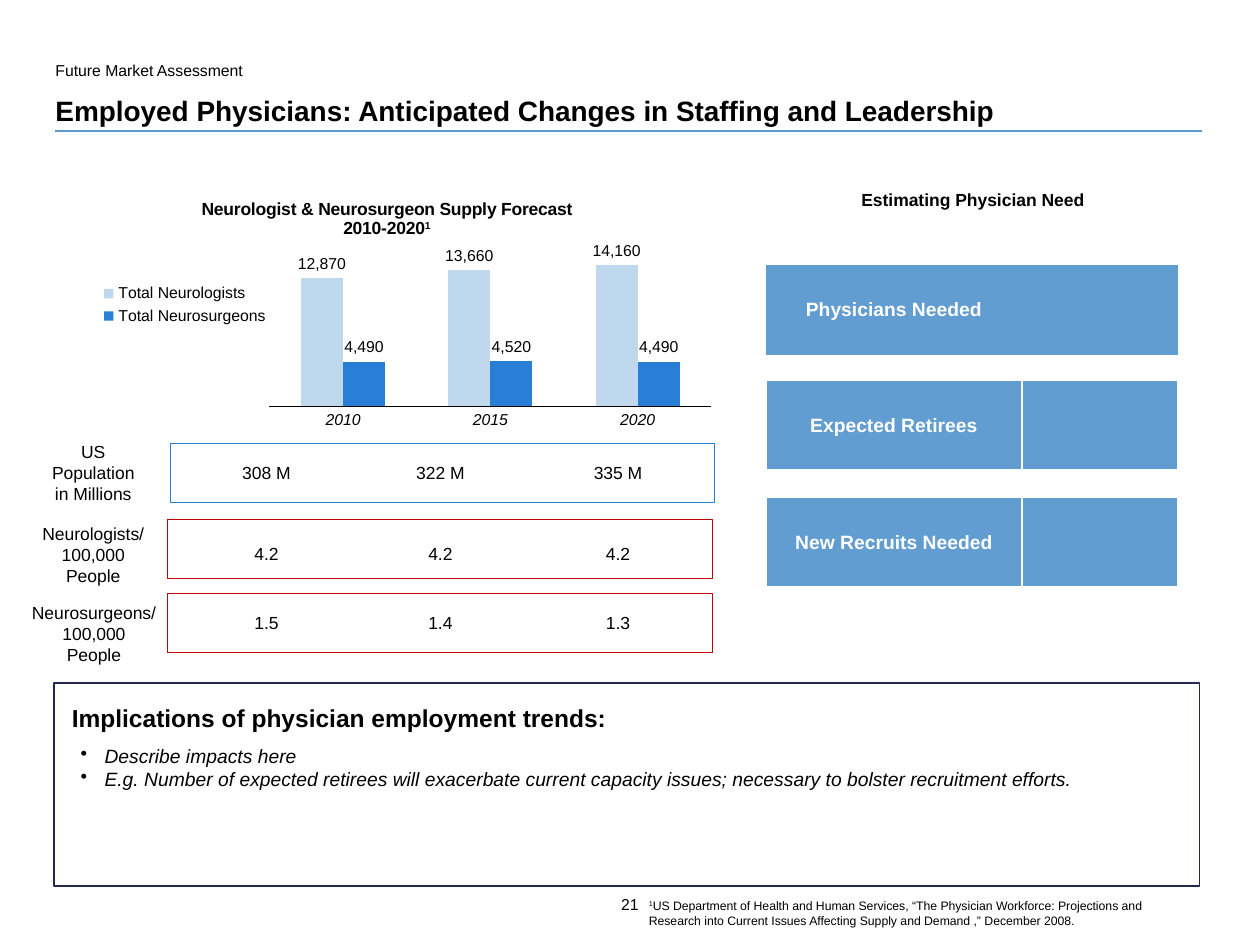
"""Build the physician staffing slide with its forecast chart and need panels."""
from dataclasses import dataclass

from lxml import etree
from pptx import Presentation
from pptx.chart.data import CategoryChartData
from pptx.dml.color import RGBColor
from pptx.enum import chart as charts, shapes, text
from pptx.oxml import ns
from pptx.util import Inches, Pt


@dataclass(frozen=True)
class Theme:
    """Colours and type sizes."""
    font: str = "Arial"
    ink: str = "000000"
    white: str = "FFFFFF"
    rule: str = "5D9ACF"
    panel: str = "629DD1"
    frame: str = "242852"
    light: str = "C0D8ED"
    blue: str = "297FD5"
    red: str = "C00000"
    title: int = 16
    heading: int = 14
    body: int = 11
    label: int = 10
    small: int = 9
    note: int = 7


@dataclass(frozen=True)
class Ratio:
    """One row of figures below the chart."""
    label: str
    label_at: tuple
    frame_at: tuple
    color: str
    values_top: float
    values: tuple


@dataclass(frozen=True)
class Panel:
    """One two-cell band of the physician need column."""
    label: str
    top: float
    bordered: bool


THEME = Theme()
LEFT, CENTER = text.PP_ALIGN.LEFT, text.PP_ALIGN.CENTER
VALUE_LEFTS = (1.76, 3.14, 4.55)
RATIOS = (
    Ratio("US Population\nin Millions", (0.29, 3.45, 0.9, 0.62), (1.35, 3.52, 4.32, 0.47),
          THEME.blue, 3.62, ("308 M", "322 M", "335 M")),
    Ratio("Neurologists/ 100,000 People", (0.24, 4.1, 1, 0.61), (1.33, 4.12, 4.32, 0.47),
          THEME.red, 4.26, ("4.2", "4.2", "4.2")),
    Ratio("Neurosurgeons/\v100,000\vPeople", (0.07, 4.73, 1.35, 0.61), (1.33, 4.71, 4.32, 0.47),
          THEME.red, 4.81, ("1.5", "1.4", "1.3")),
)
PANELS = (
    Panel("Physicians Needed", 2.1, False),
    Panel("Expected Retirees", 3.02, True),
    Panel("New Recruits Needed", 3.95, True),
)
SERIES = (
    ("Total Neurologists", (12870, 13660, 14160), THEME.light),
    ("Total Neurosurgeons", (4490, 4520, 4490), THEME.blue),
)


def style_font(font, size: float, color: str = THEME.ink, **traits) -> None:
    """Apply the theme font with the given size, colour and traits."""
    for name, value in {"name": THEME.font, "size": Pt(size), **traits}.items():
        setattr(font, name, value)
    font.color.rgb = RGBColor.from_string(color)


def raise_span(span) -> None:
    """Make a text run superscript."""
    span.font._element.set("baseline", "30000")


def write(frame, words: str, size: float, align=LEFT, color: str = THEME.ink, **traits) -> None:
    """Fill a text frame and format every paragraph."""
    frame.text = words
    for para in frame.paragraphs:
        para.alignment = align
        for span in para.runs:
            style_font(span.font, size, color, **traits)


def set_frame(frame, side: float = 0.05, edge: float = 0.05, anchor=text.MSO_ANCHOR.TOP) -> None:
    """Set wrapping, insets and anchor of a text frame."""
    settings = {"word_wrap": True, "auto_size": text.MSO_AUTO_SIZE.NONE,
                "vertical_anchor": anchor,
                "margin_left": Inches(side), "margin_right": Inches(side),
                "margin_top": Inches(edge), "margin_bottom": Inches(edge)}
    for name, value in settings.items():
        setattr(frame, name, value)


def add_text(page, at: tuple, words: str, size: float, align=LEFT,
             insets: tuple = (0.05, 0.05), **traits):
    """Add a wrapped text box and return its text frame."""
    frame = page.shapes.add_textbox(*map(Inches, at)).text_frame
    set_frame(frame, *insets)
    write(frame, words, size, align, **traits)
    return frame


def add_frame(page, at: tuple, color: str, width: float) -> None:
    """Add a white outlined rectangle."""
    box = page.shapes.add_shape(shapes.MSO_SHAPE.RECTANGLE, *map(Inches, at))
    box.shadow.inherit = False
    box.fill.solid()
    box.fill.fore_color.rgb = RGBColor.from_string(THEME.white)
    box.line.color.rgb = RGBColor.from_string(color)
    box.line.width = Pt(width)


def add_title(page) -> None:
    """Write the section name, slide title and rule."""
    add_text(page, (0.44, 0.44, 2.89, 0.2), "Future Market Assessment", THEME.small,
             insets=(0, 0.04))
    title = page.shapes.title
    title.left, title.top, title.width, title.height = map(Inches, (0.44, 0.74, 9.09, 0.27))
    set_frame(title.text_frame, 0, 0, text.MSO_ANCHOR.BOTTOM)
    write(title.text_frame, "Employed Physicians: Anticipated Changes in Staffing and Leadership",
          THEME.title, bold=True)
    rule = page.shapes.add_connector(shapes.MSO_CONNECTOR.STRAIGHT,
                                     *map(Inches, (0.44, 1.04, 9.54, 1.04)))
    rule.line.color.rgb = RGBColor.from_string(THEME.rule)
    rule.line.width = Pt(0.75)
    etree.SubElement(rule._element.spPr, ns.qn("a:effectLst"))


def place(part, index: int, **spots) -> None:
    """Give a chart part a manual layout in fractions of the chart."""
    for old in part.findall(ns.qn("c:layout")):
        part.remove(old)
    layout = etree.Element(ns.qn("c:layout"))
    manual = etree.SubElement(layout, ns.qn("c:manualLayout"))
    for name, value in spots.items():
        etree.SubElement(manual, ns.qn(f"c:{name}")).set("val", str(value))
    part.insert(index, layout)


def add_forecast(page) -> None:
    """Add the clustered supply forecast chart."""
    data = CategoryChartData(number_format="#,##0")
    data.categories = ("2010", "2015", "2020")
    for name, values, _ in SERIES:
        data.add_series(name, values)
    chart = page.shapes.add_chart(charts.XL_CHART_TYPE.COLUMN_CLUSTERED,
                                  *map(Inches, (0.59, 1.41, 5.16, 2.04)), data).chart
    style_font(chart.font, THEME.small)
    heading = chart.chart_title.text_frame
    write(heading, "Neurologist & Neurosurgeon Supply Forecast\n2010-2020", THEME.label,
          CENTER, bold=True)
    mark = heading.paragraphs[1].add_run()
    mark.text = "1"
    style_font(mark.font, THEME.label, bold=True)
    raise_span(mark)
    place(chart.chart_title._element, 1, xMode="edge", yMode="edge", x=0.19, y=0.06)
    chart.has_legend = True
    chart.legend.position = charts.XL_LEGEND_POSITION.LEFT
    chart.legend.include_in_layout = False
    style_font(chart.legend.font, THEME.small)
    place(chart.legend._element, 1, xMode="edge", yMode="edge", x=0.01, y=0.4, w=0.32, h=0.19)
    place(chart._chartSpace.chart.plotArea, 0, layoutTarget="inner", xMode="edge",
          yMode="edge", x=0.3, y=0.27, w=0.68, h=0.62)
    values, years = chart.value_axis, chart.category_axis
    for name, value in {"visible": False, "has_major_gridlines": False,
                        "minimum_scale": 0, "maximum_scale": 16000}.items():
        setattr(values, name, value)
    years.major_tick_mark = charts.XL_TICK_MARK.NONE
    years.format.line.color.rgb = RGBColor.from_string(THEME.ink)
    years.format.line.width = Pt(0.75)
    style_font(years.tick_labels.font, THEME.small, italic=True)
    plot = chart.plots[0]
    plot.gap_width, plot.overlap, plot.vary_by_categories = 150, 0, False
    for series, (_, _, color) in zip(plot.series, SERIES):
        series.format.fill.solid()
        series.format.fill.fore_color.rgb = RGBColor.from_string(color)
        labels = series.data_labels
        for name, value in {"show_value": True, "number_format": "#,##0",
                            "number_format_is_linked": False,
                            "position": charts.XL_LABEL_POSITION.OUTSIDE_END}.items():
            setattr(labels, name, value)
        style_font(labels.font, THEME.small)


def add_ratio(page, ratio: Ratio) -> None:
    """Draw a row label, its frame and its figures."""
    add_frame(page, ratio.frame_at, ratio.color, 0.25)
    add_text(page, ratio.label_at, ratio.label, THEME.label, CENTER)
    for left, value in zip(VALUE_LEFTS, ratio.values):
        add_text(page, (left, ratio.values_top, 0.71, 0.27), value, THEME.label, CENTER)


def set_borders(cell, shown: bool) -> None:
    """Draw white cell borders, or hide them."""
    props = cell._tc.get_or_add_tcPr()
    for side, width in {"L": 1, "R": 1, "T": 1, "B": 3}.items():
        line = etree.SubElement(props, ns.qn(f"a:ln{side}"), w=str(Pt(width)))
        fill = etree.SubElement(line, ns.qn("a:solidFill" if shown else "a:noFill"))
        if shown:
            etree.SubElement(fill, ns.qn("a:srgbClr"), val=THEME.white)


def add_panel(page, panel: Panel) -> None:
    """Add a one-row table with a label and an empty value cell."""
    table = page.shapes.add_table(1, 2, *map(Inches, (6.08, panel.top, 3.27, 0.72))).table
    table.first_row = table.horz_banding = False
    for column, width, words in zip(table.columns, (2.03, 1.24), (panel.label, "")):
        column.width = Inches(width)
        cell = table.cell(0, 0 if words else 1)
        set_borders(cell, panel.bordered)
        cell.fill.solid()
        cell.fill.fore_color.rgb = RGBColor.from_string(THEME.panel)
        cell.vertical_anchor = text.MSO_ANCHOR.MIDDLE
        write(cell.text_frame, words, THEME.body, CENTER, THEME.white, bold=True)


def add_implications(page) -> None:
    """Add the framed implications with bullets."""
    add_frame(page, (0.43, 5.42, 9.09, 1.61), THEME.frame, 1)
    add_text(page, (0.43, 5.51, 8.46, 0.38), "Implications of physician employment trends:",
             THEME.heading, insets=(0.14, 0.07), bold=True)
    points = add_text(page, (0.59, 5.86, 8.7, 1.1),
                      "Describe impacts here\nE.g. Number of expected retirees will exacerbate "
                      "current capacity issues; necessary to bolster recruitment efforts.",
                      THEME.body, italic=True)
    for para in points.paragraphs:
        props = para._p.get_or_add_pPr()
        props.set("marL", str(Inches(0.19)))
        props.set("indent", str(Inches(-0.19)))
        etree.SubElement(props, ns.qn("a:buChar"), char="•")


def add_footer(page) -> None:
    """Add the page number and the source note."""
    add_text(page, (4.66, 7.06, 0.68, 0.26), "21", THEME.small, CENTER, (0.04, 0.04))
    note = add_text(page, (5.1, 7.08, 4.4, 0.34), "1", THEME.note)
    raise_span(note.paragraphs[0].runs[0])
    span = note.paragraphs[0].add_run()
    span.text = ("US Department of Health and Human Services, “The Physician Workforce: "
                 "Projections and Research into Current Issues Affecting Supply and Demand ,” "
                 "December 2008.")
    style_font(span.font, THEME.note)


def main() -> None:
    """Build and save the deck."""
    deck = Presentation()
    deck.slide_width, deck.slide_height = Inches(10), Inches(7.5)
    page = deck.slides.add_slide(deck.slide_layouts[5])
    add_title(page)
    add_forecast(page)
    for ratio in RATIOS:
        add_ratio(page, ratio)
    add_text(page, (6.47, 1.45, 2.5, 0.28), "Estimating Physician Need", THEME.label, CENTER,
             bold=True)
    for panel in PANELS:
        add_panel(page, panel)
    add_implications(page)
    add_footer(page)
    deck.save("out.pptx")


if __name__ == "__main__":
    main()
